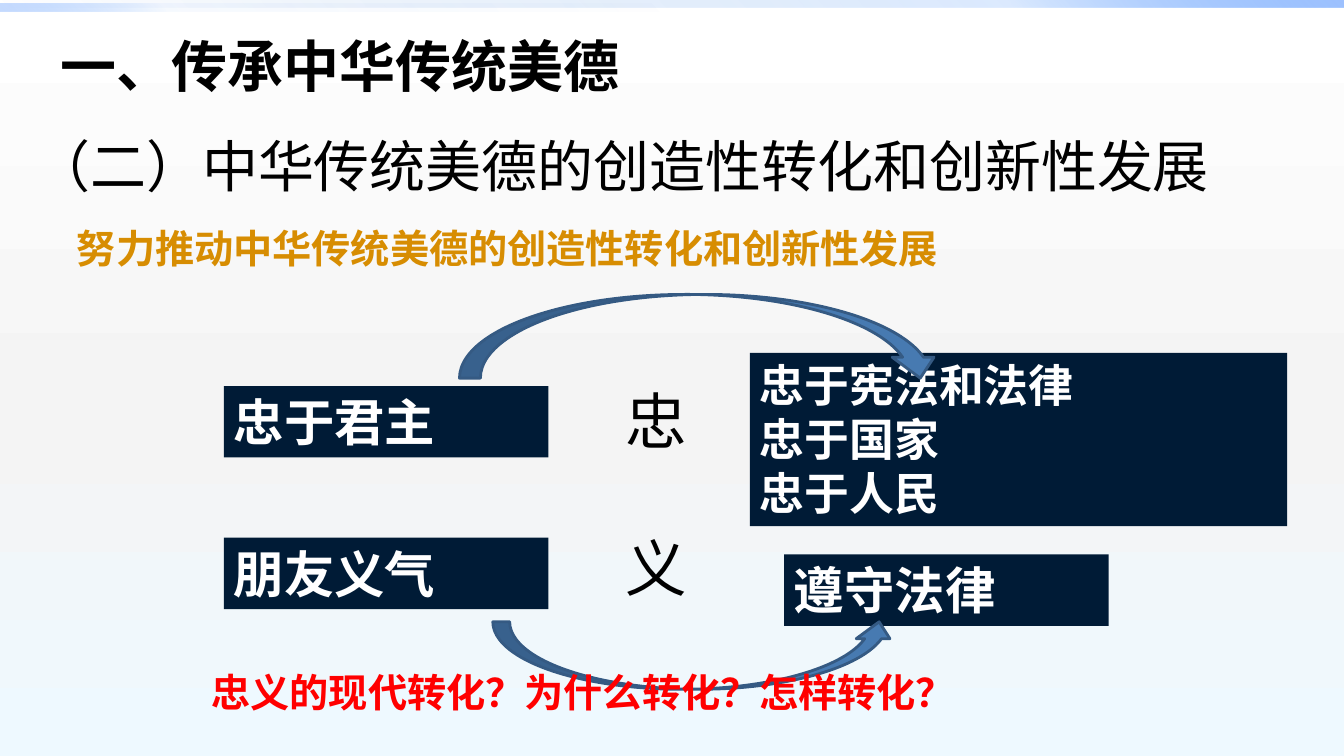
"""Build the slide on transforming traditional Chinese virtues."""
from dataclasses import dataclass

from lxml import etree
from pptx import Presentation
from pptx.dml.color import RGBColor
from pptx.enum.shapes import MSO_SHAPE
from pptx.enum.text import MSO_ANCHOR, MSO_AUTO_SIZE, PP_ALIGN
from pptx.oxml.ns import qn
from pptx.util import Cm, Pt

RECT = MSO_SHAPE.RECTANGLE
ARROW_DOWN, ARROW_UP = MSO_SHAPE.CURVED_DOWN_ARROW, MSO_SHAPE.CURVED_UP_ARROW
LEFT, JUSTIFY = PP_ALIGN.LEFT, PP_ALIGN.JUSTIFY
TOP, NO_FIT = MSO_ANCHOR.TOP, MSO_AUTO_SIZE.NONE


@dataclass(frozen=True)
class Theme:
    cjk: str = "Noto Sans CJK SC"
    latin: str = "Calibri"
    black: str = "000000"
    white: str = "FFFFFF"
    navy: str = "001B36"
    gold: str = "D78D02"
    red: str = "FF0000"
    arrow: str = "477AB1"
    arrow_line: str = "355A83"
    heading: int = 40
    virtue: int = 44
    box: int = 36
    box_list: int = 32
    note: int = 28


@dataclass(frozen=True)
class Area:
    x: float
    y: float
    w: float
    h: float

    def cm(self) -> tuple:
        return Cm(self.x), Cm(self.y), Cm(self.w), Cm(self.h)


@dataclass(frozen=True)
class Stop:
    pos: int
    color: str
    alpha: int = 100


@dataclass(frozen=True)
class Strip:
    area: Area
    angle: int
    stops: tuple


@dataclass(frozen=True)
class Label:
    area: Area
    lines: tuple
    size: int
    color: str
    font: str
    bold: bool = True
    fill: str = ""
    align: PP_ALIGN = LEFT
    spacing: float = 1.0
    gap: int = 0
    wrap: bool = True


@dataclass(frozen=True)
class Arrow:
    kind: MSO_SHAPE
    area: Area


T = Theme()
BACKGROUND = (Stop(0, "FFFFFF"), Stop(55, "F4F4F4"), Stop(100, "EEF9FF"))
STRIPS = (
    Strip(Area(0, 0, 33.87, 0.2), 315,
          (Stop(0, "0058B7", 0), Stop(75, "4F95FF", 20), Stop(100, "9EC2FF"))),
    Strip(Area(0, 0.1, 16.93, 0.2), 135,
          (Stop(0, "0058B7", 0), Stop(75, "4F95FF", 5), Stop(100, "9EC2FF", 60))),
)
HEADING = Label(Area(0.61, 0.33, 31.5, 4.85),
                ("一、传承中华传统美德", "（二）中华传统美德的创造性转化和创新性发展"),
                T.heading, T.black, T.cjk, spacing=1.2, gap=14)
HEADING_INDENTS = (0.65, 0)
SUBHEADING = Label(Area(1.69, 5.28, 30.76, 1.7),
                   ("努力推动中华传统美德的创造性转化和创新性发展",),
                   T.note, T.gold, T.latin, align=JUSTIFY, spacing=1.2)
BOXES = tuple(
    Label(Area(x, y, 8.18, 1.8), (text,), T.box, T.white, T.cjk, fill=T.navy)
    for x, y, text in ((5.64, 9.73, "忠于君主"), (5.64, 13.55, "朋友义气"),
                       (19.76, 13.97, "遵守法律"))
) + (
    Label(Area(18.9, 8.89, 13.54, 4.37), ("忠于宪法和法律", "忠于国家", "忠于人民"),
          T.box_list, T.white, T.cjk, fill=T.navy),
)
ARROWS = (
    Arrow(ARROW_UP, Area(12.42, 15.67, 10.16, 1.7)),
    Arrow(ARROW_DOWN, Area(11.58, 7.42, 12.14, 2.11)),
)
NOTES = (
    Label(Area(15.52, 9.53, 3.66, 5.89), ("忠", "义"), T.virtue, T.black, T.cjk,
          bold=False, gap=52),
    Label(Area(5.08, 16.71, 19.56, 1.45), ("忠义的现代转化？为什么转化？怎样转化？",),
          T.note, T.red, T.cjk, wrap=False),
)


def rgb(color: str) -> RGBColor:
    return RGBColor.from_string(color)


def set_gradient(fill, element, angle: int, stops: tuple) -> None:
    fill.gradient()
    fill.gradient_angle = 360 - angle
    stop_list = next(element.iter(qn("a:gsLst")))
    for old in list(stop_list):
        stop_list.remove(old)
    for stop in stops:
        gs = etree.SubElement(stop_list, qn("a:gs"), pos=str(stop.pos * 1000))
        clr = etree.SubElement(gs, qn("a:srgbClr"), val=stop.color)
        if stop.alpha < 100:
            etree.SubElement(clr, qn("a:alpha"), val=str(stop.alpha * 1000))


def add_strip(s, strip: Strip) -> None:
    sp = s.shapes.add_shape(RECT, *strip.area.cm())
    sp.shadow.inherit = False
    sp.line.fill.background()
    set_gradient(sp.fill, sp._element, strip.angle, strip.stops)


def fill_text(tf, label: Label) -> None:
    tf.auto_size = NO_FIT
    tf.word_wrap = label.wrap
    tf.vertical_anchor = TOP
    for i, line in enumerate(label.lines):
        p = tf.add_paragraph() if i else tf.paragraphs[0]
        p.text = line
        p.alignment = label.align
        p.line_spacing = label.spacing
        p.space_before = Pt(label.gap if i else 0)
        p.font.name = label.font
        p.font.size = Pt(label.size)
        p.font.bold = label.bold
        p.font.color.rgb = rgb(label.color)


def add_label(s, label: Label) -> None:
    if label.fill:
        sp = s.shapes.add_shape(RECT, *label.area.cm())
        sp.shadow.inherit = False
        sp.fill.solid()
        sp.fill.fore_color.rgb = rgb(label.fill)
        sp.line.fill.background()
    else:
        sp = s.shapes.add_textbox(*label.area.cm())
    fill_text(sp.text_frame, label)


def add_heading(s, label: Label) -> None:
    sp = s.shapes.title
    sp.left, sp.top, sp.width, sp.height = label.area.cm()
    fill_text(sp.text_frame, label)
    for p, indent in zip(sp.text_frame.paragraphs, HEADING_INDENTS):
        p_pr = p._p.get_or_add_pPr()
        p_pr.set("marL", str(Cm(indent)))
        p_pr.set("indent", "0")
    p.font.bold = False


def add_arrow(s, arrow: Arrow) -> None:
    sp = s.shapes.add_shape(arrow.kind, *arrow.area.cm())
    sp.shadow.inherit = False
    sp.fill.solid()
    sp.fill.fore_color.rgb = rgb(T.arrow)
    sp.line.color.rgb = rgb(T.arrow_line)
    sp.line.width = Pt(2)


def main() -> None:
    prs = Presentation()
    prs.slide_width, prs.slide_height = Cm(33.87), Cm(19.05)
    s = prs.slides.add_slide(prs.slide_layouts[5])
    set_gradient(s.background.fill, s._element, 90, BACKGROUND)
    for strip in STRIPS:
        add_strip(s, strip)
    add_heading(s, HEADING)
    for label in (SUBHEADING, *BOXES):
        add_label(s, label)
    for arrow in ARROWS:
        add_arrow(s, arrow)
    for label in NOTES:
        add_label(s, label)
    prs.save("out.pptx")


if __name__ == "__main__":
    main()
